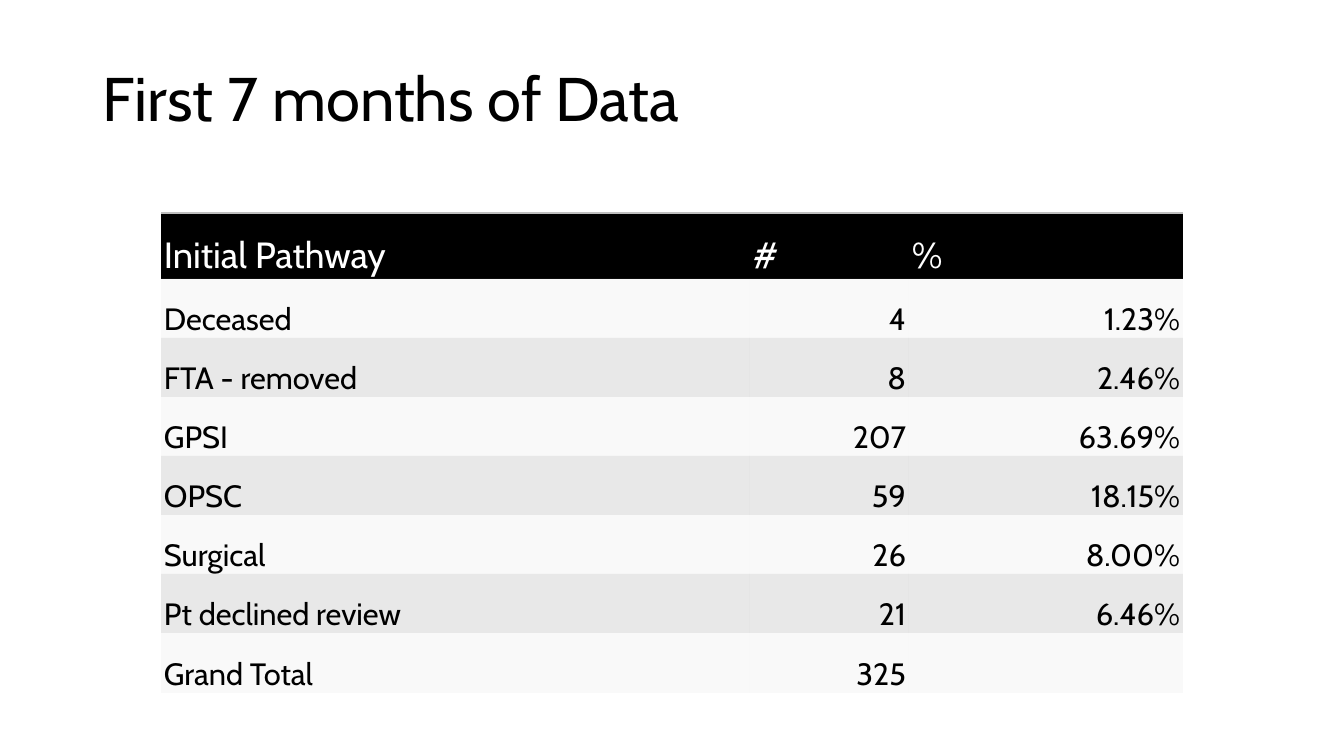
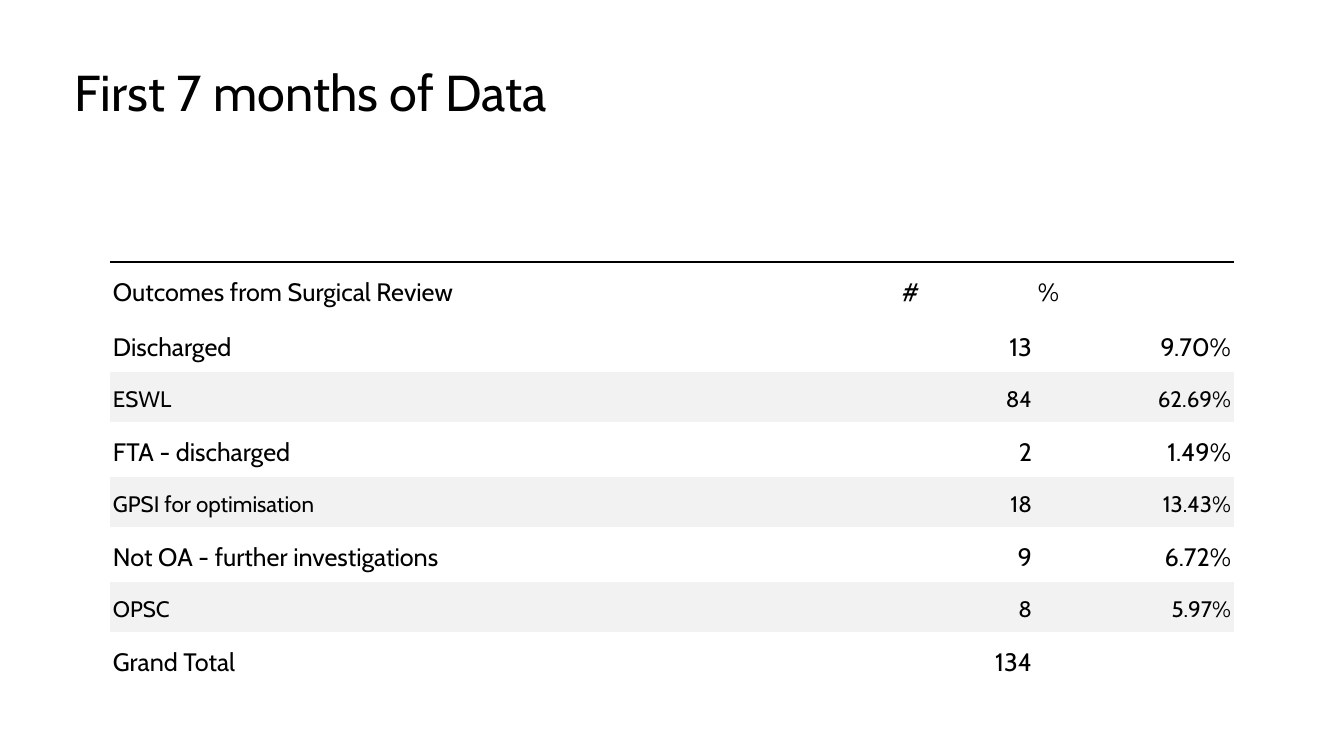
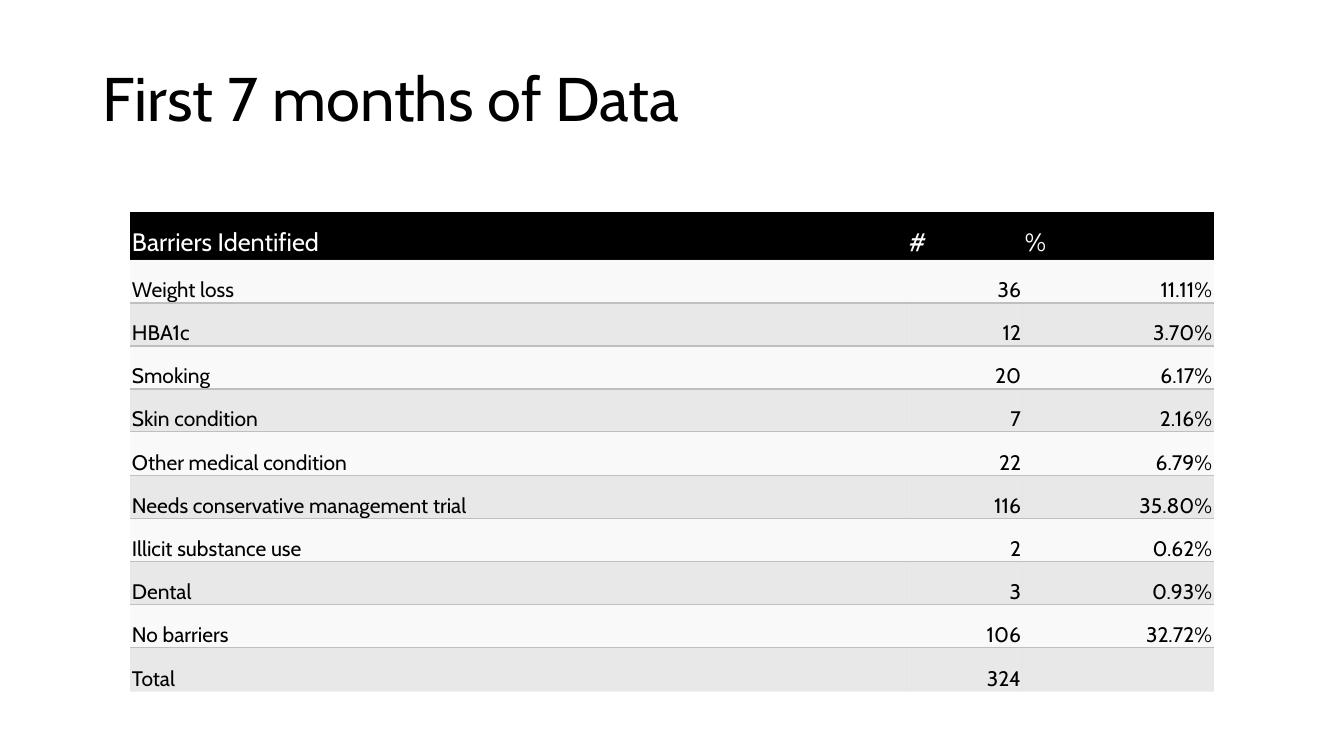
from lxml.etree import SubElement, fromstring
from pptx import Presentation
from pptx.dml.color import RGBColor
from pptx.enum.text import MSO_ANCHOR as Anchor, PP_ALIGN as Align
from pptx.oxml.ns import nsdecls, qn
from pptx.util import Pt

PX = 914400 / 100.8
FONT = "Cabin"
BLACK, WHITE, PALE, GREY = "000000", "FFFFFF", "F2F2F2", "BFBFBF"
PLAIN = "{2D5ABB26-0587-4C30-8999-92F81FD0307C}"  # no style, no grid


def px(*sizes):
    return [round(size * PX) for size in sizes]


def write(frame, text, size, color=BLACK, align=Align.LEFT, space=None):
    para = frame.paragraphs[0]
    para.alignment = align
    para.line_spacing = space
    run = para.add_run()
    run.text = text
    run.font.name = FONT
    run.font.size = Pt(size)
    run.font.color.rgb = RGBColor.from_string(color)


# Fills and sizes are (head, odd row, even row); a fill is (color, opacity %).
# A rule is (color, points) on the top edge of the listed rows.
BANDS = [(BLACK, 100), (PALE, 45), (GREY, 35)]
BIG = dict(box=(93, 28, 1158, 112), size=44, anchor=Anchor.BOTTOM)
SMALL = dict(box=(65, 27, 773, 136), size=36, anchor=Anchor.MIDDLE)

slides = [
    dict(
        title=BIG, spot=(161, 213), cols=(589, 159, 274),
        heights=[66] + [59] * 6 + [60], pads=(3, 19, 3, 0),
        sizes=(26, 22, 22), fills=BANDS, ink=WHITE, anchor=Anchor.MIDDLE,
        rule=(GREY, 1), ruled=[0],
        rows=[
            ("Initial Pathway", "#", "%"),
            ("Deceased", "4", "1.23%"),
            ("FTA - removed", "8", "2.46%"),
            ("GPSI", "207", "63.69%"),
            ("OPSC", "59", "18.15%"),
            ("Surgical", "26", "8.00%"),
            ("Pt declined review", "21", "6.46%"),
            ("Grand Total", "325", ""),
        ],
    ),
    dict(
        title=SMALL, spot=(110, 262), cols=(789, 136, 199),
        heights=[55] + [55, 50] * 3 + [55], pads=(3, 9, 3, 9),
        sizes=(18, 18, 16), fills=[None, None, (PALE, 100)], ink=BLACK,
        anchor=Anchor.BOTTOM, rule=(BLACK, 2.25), ruled=[0],
        rows=[
            ("Outcomes from Surgical Review", "#", "%"),
            ("Discharged", "13", "9.70%"),
            ("ESWL", "84", "62.69%"),
            ("FTA - discharged", "2", "1.49%"),
            ("GPSI for optimisation", "18", "13.43%"),
            ("Not OA - further investigations", "9", "6.72%"),
            ("OPSC", "8", "5.97%"),
            ("Grand Total", "134", ""),
        ],
    ),
    dict(
        title=BIG, spot=(130, 212), cols=(777, 116, 191),
        heights=[48] + [43, 43, 43, 43, 44] * 2, pads=(2, 13, 2, 0),
        sizes=(18, 15, 15), fills=BANDS, ink=WHITE, anchor=Anchor.MIDDLE,
        rule=(GREY, 1), ruled=range(2, 11, 2),
        rows=[
            ("Barriers Identified", "#", "%"),
            ("Weight loss", "36", "11.11%"),
            ("HBA1c", "12", "3.70%"),
            ("Smoking", "20", "6.17%"),
            ("Skin condition", "7", "2.16%"),
            ("Other medical condition", "22", "6.79%"),
            ("Needs conservative management trial", "116", "35.80%"),
            ("Illicit substance use", "2", "0.62%"),
            ("Dental", "3", "0.93%"),
            ("No barriers", "106", "32.72%"),
            ("Total", "324", ""),
        ],
    ),
]

deck = Presentation()
deck.slide_width, deck.slide_height = px(1344, 756)

for data in slides:
    slide = deck.slides.add_slide(deck.slide_layouts[6])
    rows, cols, heights = data["rows"], data["cols"], data["heights"]

    grid = slide.shapes.add_table(
        len(rows), len(cols), *px(*data["spot"], sum(cols), sum(heights)))
    for style in grid.element.iter(qn("a:tableStyleId")):
        style.text = PLAIN
    table = grid.table
    for col, width in zip(table.columns, px(*cols)):
        col.width = width
    for row, height in zip(table.rows, px(*heights)):
        row.height = height

    for r, words in enumerate(rows):
        kind = 0 if r == 0 else 2 - r % 2
        fill = data["fills"][kind]
        for c, text in enumerate(words):
            cell = table.cell(r, c)
            (cell.margin_left, cell.margin_top,
             cell.margin_right, cell.margin_bottom) = px(*data["pads"])
            cell.vertical_anchor = Anchor.BOTTOM if r else data["anchor"]
            write(cell.text_frame, text, data["sizes"][kind],
                  color=BLACK if r else data["ink"],
                  align=Align.RIGHT if r and c else Align.LEFT)

            if fill:
                color, alpha = fill
                cell.fill.solid()
                cell.fill.fore_color.rgb = RGBColor.from_string(color)
                if alpha < 100:
                    tone = cell._tc.tcPr.find(qn("a:solidFill"))[0]
                    SubElement(tone, qn("a:alpha"), val=str(alpha * 1000))
            else:
                cell.fill.background()

            if r in data["ruled"]:
                color, width = data["rule"]
                cell._tc.tcPr.insert(0, fromstring(
                    f'<a:lnT {nsdecls("a")} w="{Pt(width)}"><a:solidFill>'
                    f'<a:srgbClr val="{color}"/></a:solidFill></a:lnT>'))

    title = data["title"]
    frame = slide.shapes.add_textbox(*px(*title["box"])).text_frame
    frame.word_wrap = True
    frame.vertical_anchor = title["anchor"]
    write(frame, "First 7 months of Data", title["size"], space=0.9)

deck.save("out.pptx")
